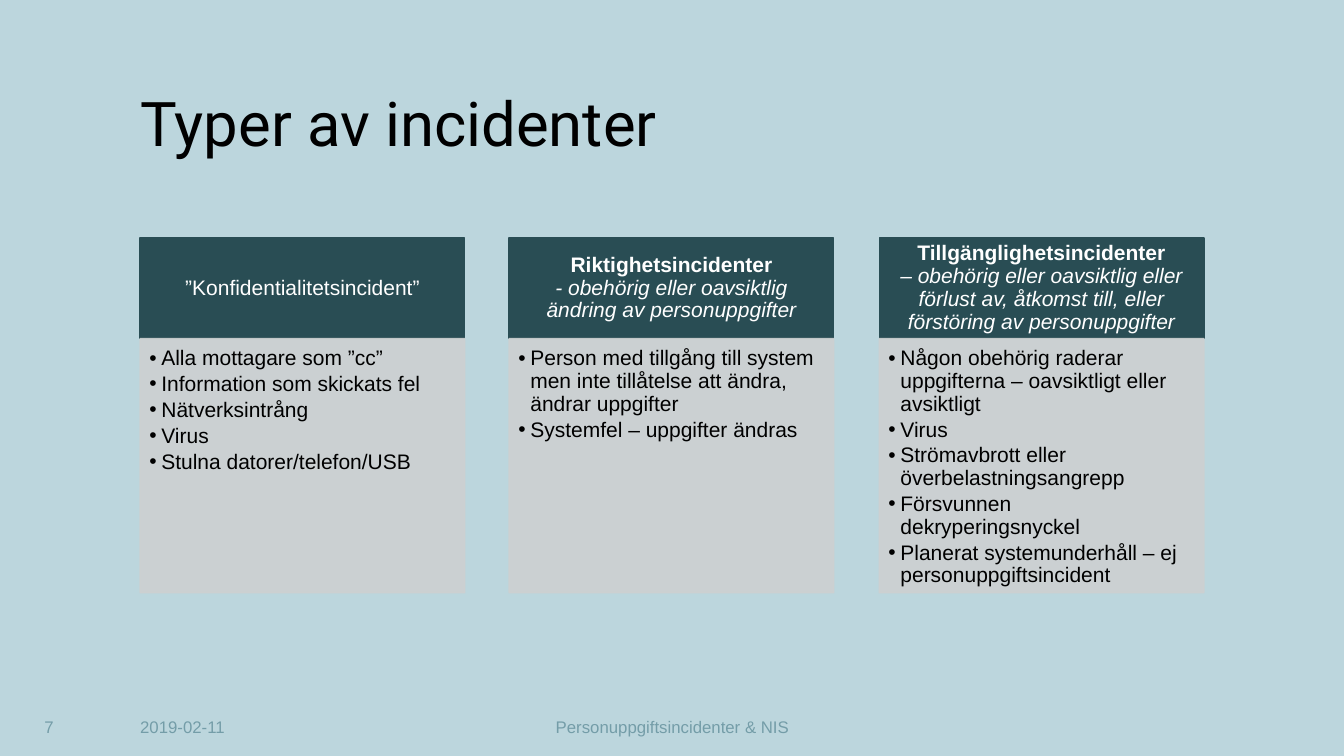
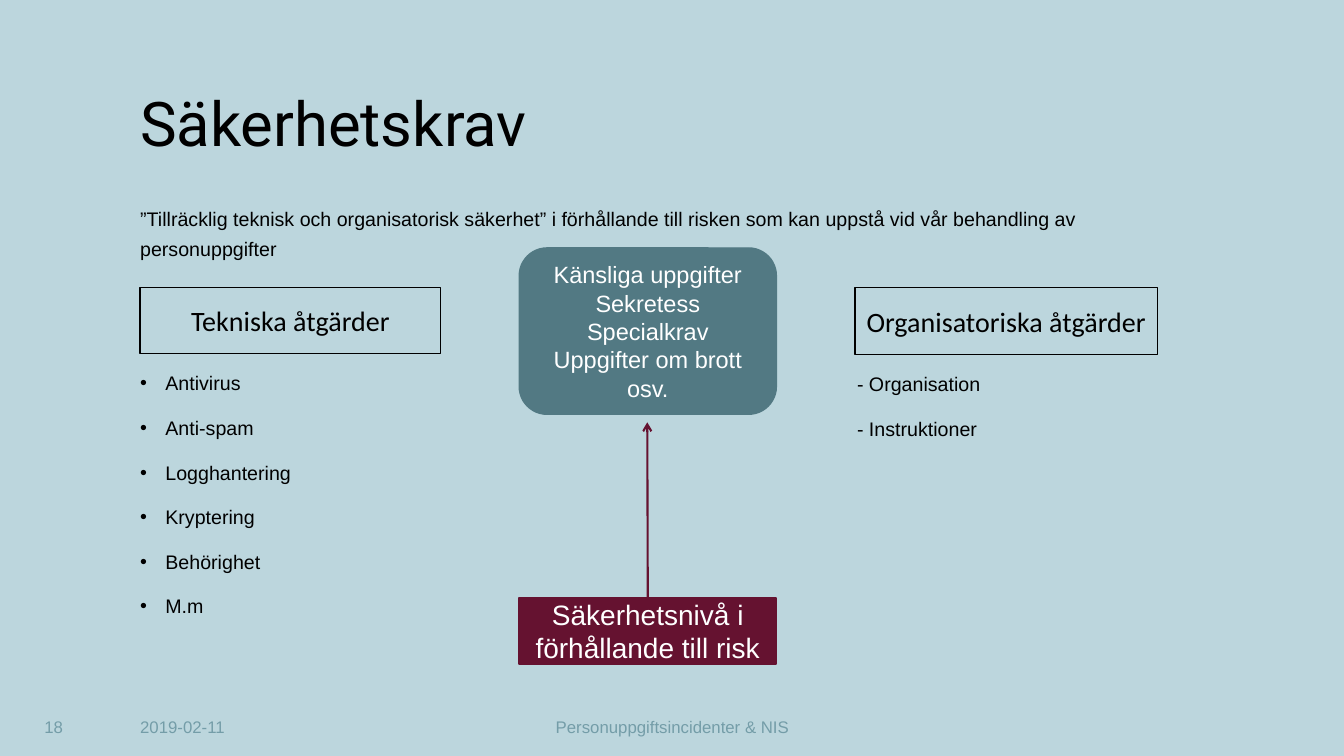
"""Build two slides on personal data incidents and security requirements."""
from typing import NamedTuple, Optional

from lxml.etree import SubElement
from pptx import Presentation
from pptx.dml.color import RGBColor
from pptx.enum.shapes import MSO_CONNECTOR as Connector, MSO_SHAPE as Preset
from pptx.enum.text import MSO_ANCHOR as Anchor, MSO_AUTO_SIZE as AutoSize, PP_ALIGN as Align
from pptx.oxml.ns import qn
from pptx.util import Emu, Pt

EMU_PER_PX = 9144
SLIDE_WIDTH, SLIDE_HEIGHT = 1333, 750
LEFT, CONTENT_WIDTH = 139, 1055
PALE_BLUE, DARK_TEAL, TEAL, MUTED_TEAL = "BCD6DD", "294D54", "527983", "749DA8"
GRAY, WINE, BLACK, WHITE = "CDD0D1", "651230", "000000", "FFFFFF"
TITLE_ONLY, TWO_CONTENT = 5, 3


class Box(NamedTuple):
    left: int
    top: int
    width: int
    height: int


class Insets(NamedTuple):
    left: int = 0
    top: int = 0
    right: int = 0
    bottom: int = 0


class Incident(NamedTuple):
    heading: str
    definition: str
    examples: tuple[str, ...]


class FooterPart(NamedTuple):
    text: str
    box: Box
    align: Align = Align.LEFT


class Measure(NamedTuple):
    heading: str
    box: Box


DEFAULT_INSETS = Insets(10, 5, 10, 5)
TITLE_BOX = Box(LEFT, 21, CONTENT_WIDTH, 138)
INCIDENTS = (
    Incident("”Konfidentialitetsincident”", "", (
        "Alla mottagare som ”cc”",
        "Information som skickats fel",
        "Nätverksintrång",
        "Virus",
        "Stulna datorer/telefon/USB",
    )),
    Incident("Riktighetsincidenter", "- obehörig eller oavsiktlig ändring av personuppgifter", (
        "Person med tillgång till system men inte tillåtelse att ändra, ändrar uppgifter",
        "Systemfel – uppgifter ändras",
    )),
    Incident(
        "Tillgänglighetsincidenter",
        "– obehörig eller oavsiktlig eller förlust av, åtkomst till, eller "
        "förstöring av personuppgifter", (
            "Någon obehörig raderar uppgifterna – oavsiktligt eller avsiktligt",
            "Virus",
            "Strömavbrott eller överbelastningsangrepp",
            "Försvunnen dekryperingsnyckel",
            "Planerat systemunderhåll – ej personuppgiftsincident",
        )),
)
INTRO = ("”Tillräcklig teknisk och organisatorisk säkerhet” i förhållande till risken "
         "som kan uppstå vid vår behandling av personuppgifter")
TECHNICAL = ("Antivirus", "Anti-spam", "Logghantering", "Kryptering", "Behörighet", "M.m")
ORGANISATIONAL = ("- Organisation", "- Instruktioner")
MEASURES = (
    Measure("Tekniska åtgärder", Box(LEFT, 285, 298, 66)),
    Measure("Organisatoriska åtgärder", Box(848, 285, 300, 67)),
)
SENSITIVE = ("Känsliga uppgifter", "Sekretess", "Specialkrav", "Uppgifter om brott", "osv.")


def px(length: int) -> Emu:
    return Emu(length * EMU_PER_PX)


def color(value: str) -> RGBColor:
    return RGBColor.from_string(value)


def place(shape, box: Box) -> None:
    shape.left, shape.top, shape.width, shape.height = map(px, box)


def set_frame(shape, anchor=Anchor.MIDDLE, insets: Insets = Insets()):
    frame = shape.text_frame
    frame.auto_size = AutoSize.NONE
    frame.word_wrap = True
    frame.vertical_anchor = anchor
    frame.margin_left, frame.margin_top, frame.margin_right, frame.margin_bottom = map(px, insets)
    return frame


def add_text(frame, text: str, *, size: float, ink: str = BLACK, font: str = "Arial",
             align=Align.LEFT, bold: bool = False, italic: bool = False,
             spacing: float = 1.0, before: float = 0, after: float = 0,
             bullet_indent: int = 0, same_paragraph: bool = False) -> None:
    paragraph = frame.paragraphs[-1]
    if same_paragraph:
        paragraph.add_line_break()
    else:
        if paragraph.runs:
            paragraph = frame.add_paragraph()
        properties = paragraph._p.get_or_add_pPr()
        properties.set("marL", str(px(bullet_indent)))
        properties.set("indent", str(px(-bullet_indent)))
        if bullet_indent:
            SubElement(properties, qn("a:buFont"), typeface="Arial")
            SubElement(properties, qn("a:buChar"), char="•")
        else:
            SubElement(properties, qn("a:buNone"))
        paragraph.alignment = align
        paragraph.line_spacing = spacing
        paragraph.space_before = Pt(before)
        paragraph.space_after = Pt(after)
    run = paragraph.add_run()
    run.text = text
    run.font.name = font
    run.font.size = Pt(size)
    run.font.bold = bold
    run.font.italic = italic
    run.font.color.rgb = color(ink)


def add_block(slide, box: Box, fill: Optional[str], line: str, *, preset=Preset.RECTANGLE,
              line_width: float = 1, opacity: int = 100):
    block = slide.shapes.add_shape(preset, *map(px, box))
    block.shadow.inherit = False
    if fill:
        block.fill.solid()
        block.fill.fore_color.rgb = color(fill)
    else:
        block.fill.background()
    block.line.color.rgb = color(line)
    block.line.width = Pt(line_width)
    if opacity < 100:
        for paint in block.element.spPr.iter(qn("a:srgbClr")):
            SubElement(paint, qn("a:alpha"), val=str(opacity * 1000))
    return block


def add_slide(deck, layout: int, title: str, number: int):
    slide = deck.slides.add_slide(deck.slide_layouts[layout])
    heading = slide.shapes.title
    place(heading, TITLE_BOX)
    add_text(set_frame(heading, Anchor.BOTTOM), title, size=44, font="Roboto", spacing=0.9)
    for part in (
        FooterPart("2019-02-11", Box(LEFT, 711, 124, 20)),
        FooterPart("Personuppgiftsincidenter & NIS", Box(399, 711, 536, 20), Align.CENTER),
        FooterPart(str(number), Box(44, 711, 81, 20)),
    ):
        footer = slide.shapes.add_textbox(*map(px, part.box))
        add_text(set_frame(footer), part.text, size=12, ink=MUTED_TEAL, align=part.align)
    return slide


def add_incident(slide, incident: Incident, left: int, width: int) -> None:
    header = add_block(slide, Box(left, 236, width, 100), DARK_TEAL, DARK_TEAL)
    frame = set_frame(header, insets=Insets(12, 7, 12, 7))
    add_text(frame, incident.heading, size=15, ink=WHITE, align=Align.CENTER,
             bold=bool(incident.definition), spacing=0.9)
    if incident.definition:
        add_text(frame, incident.definition, size=15, ink=WHITE, italic=True,
                 same_paragraph=True)
    panel = add_block(slide, Box(left, 336, width, 252), GRAY, GRAY, opacity=90)
    frame = set_frame(panel, Anchor.TOP, Insets(9, 9, 12, 13))
    for example in incident.examples:
        add_text(frame, example, size=15, spacing=0.9, after=2.25, bullet_indent=12)


def build_incidents(deck) -> None:
    slide = add_slide(deck, TITLE_ONLY, "Typer av incidenter", 7)
    width = 322
    for index, incident in enumerate(INCIDENTS):
        left = LEFT + index * (CONTENT_WIDTH - width) // (len(INCIDENTS) - 1)
        add_incident(slide, incident, left, width)


def add_arrow(slide, source, end: tuple[int, int]) -> None:
    arrow = slide.shapes.add_connector(Connector.STRAIGHT, 0, 0, *map(px, end))
    arrow.begin_connect(source, 0)
    arrow.line.color.rgb = color(WINE)
    arrow.line.width = Pt(1.5)
    properties = arrow.element.spPr
    SubElement(properties.find(qn("a:ln")), qn("a:tailEnd"), type="arrow")
    SubElement(properties, qn("a:effectLst"))


def build_requirements(deck) -> None:
    slide = add_slide(deck, TWO_CONTENT, "Säkerhetskrav", 18)
    technical, organisational = list(slide.placeholders)[1:3]
    place(technical, Box(LEFT, 198, CONTENT_WIDTH, 429))
    frame = set_frame(technical, Anchor.TOP)
    add_text(frame, INTRO, size=14, spacing=1.3)
    for index, item in enumerate(TECHNICAL):
        add_text(frame, item, size=14, spacing=1.3, before=10 if index else 74, bullet_indent=25)
    place(organisational, Box(850, 362, 300, 100))
    frame = set_frame(organisational, Anchor.TOP)
    for index, item in enumerate(ORGANISATIONAL):
        add_text(frame, item, size=14, spacing=1.3, before=10 if index else 0)
    for measure in MEASURES:
        block = add_block(slide, measure.box, None, BLACK)
        add_text(set_frame(block, insets=DEFAULT_INSETS), measure.heading, size=20,
                 font="Calibri", align=Align.CENTER)
    sensitive = add_block(slide, Box(515, 246, 255, 165), TEAL, TEAL,
                          preset=Preset.ROUNDED_RECTANGLE)
    frame = set_frame(sensitive, insets=DEFAULT_INSETS)
    for item in SENSITIVE:
        add_text(frame, item, size=16.8, ink=WHITE, align=Align.CENTER)
    risk_level = add_block(slide, Box(515, 593, 255, 66), WINE, WINE, line_width=1.5)
    add_text(set_frame(risk_level, insets=DEFAULT_INSETS),
             "Säkerhetsnivå i förhållande till risk", size=20, ink=WHITE, align=Align.CENTER)
    add_arrow(slide, risk_level, (642, 419))


def main() -> None:
    deck = Presentation()
    deck.slide_width, deck.slide_height = px(SLIDE_WIDTH), px(SLIDE_HEIGHT)
    background = deck.slide_master.background.fill
    background.solid()
    background.fore_color.rgb = color(PALE_BLUE)
    build_incidents(deck)
    build_requirements(deck)
    deck.save("out.pptx")


if __name__ == "__main__":
    main()
